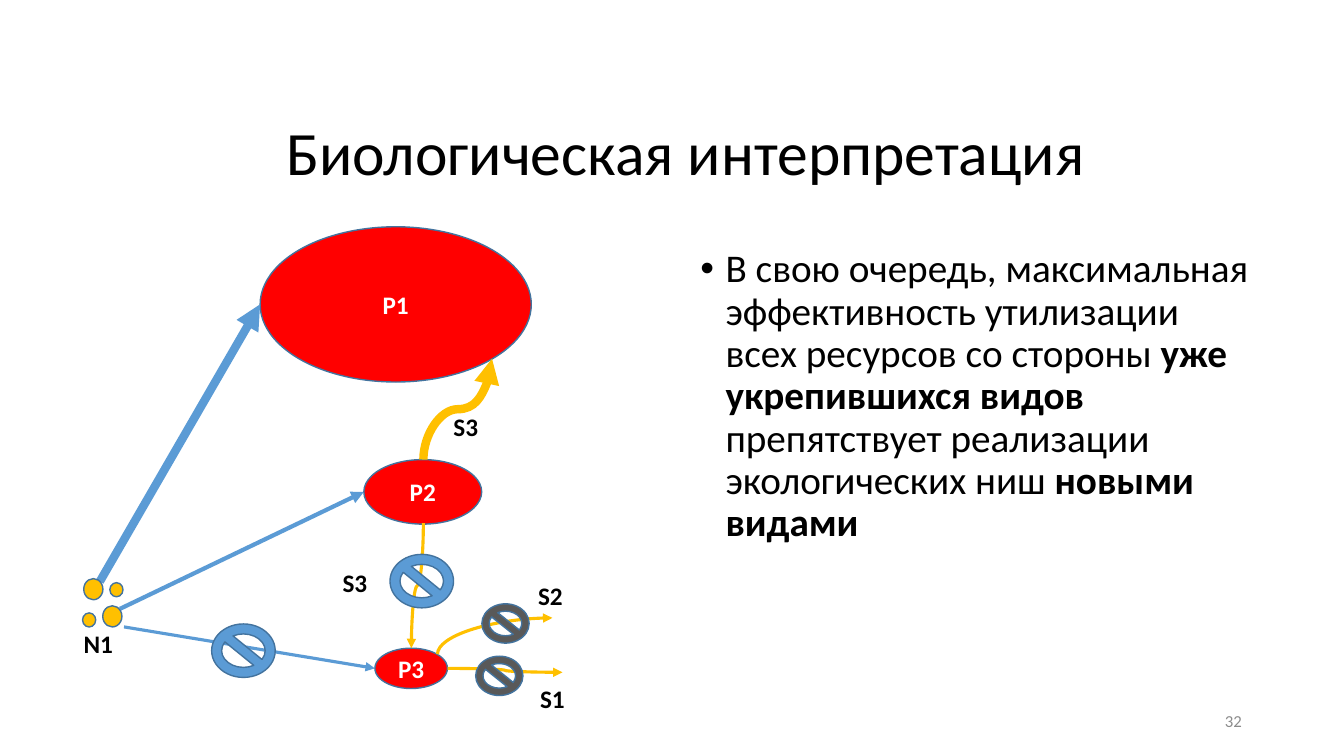
from dataclasses import dataclass

from lxml import etree
from pptx import Presentation
from pptx.dml.color import RGBColor
from pptx.enum.shapes import MSO_CONNECTOR, MSO_SHAPE
from pptx.enum.text import MSO_ANCHOR, PP_ALIGN
from pptx.oxml.ns import qn
from pptx.util import Pt

OVAL, BAN = MSO_SHAPE.OVAL, MSO_SHAPE.NO_SYMBOL
STRAIGHT, CURVE = MSO_CONNECTOR.STRAIGHT, MSO_CONNECTOR.CURVE
LEFT, CENTER, RIGHT = PP_ALIGN.LEFT, PP_ALIGN.CENTER, PP_ALIGN.RIGHT
TOP, MIDDLE = MSO_ANCHOR.TOP, MSO_ANCHOR.MIDDLE


@dataclass(frozen=True)
class Theme:
    font: str = "Calibri"
    text: str = "000000"
    inverse: str = "FFFFFF"
    muted: str = "8C8C8C"
    species: str = "FF0000"
    resource: str = "FFC000"
    flow: str = "5B9BD5"
    blocked: str = "595959"
    outline: str = "43739E"
    title_size: int = 44
    body_size: int = 28
    label_size: int = 18
    number_size: int = 12


T = Theme()


def rgb(value):
    return RGBColor.from_string(value)


def write(sp, runs, size=T.label_size, color=T.text, bold=False, align=LEFT,
          anchor=TOP, wrap=True, spacing=None, bullet=False):
    """Fill a shape with one paragraph; runs is a string or (text, bold) pairs."""
    tf = sp.text_frame
    tf.word_wrap, tf.vertical_anchor = wrap, anchor
    p = tf.paragraphs[0]
    p.alignment, p.line_spacing = align, spacing
    if bullet:
        pPr = p._p.get_or_add_pPr()
        pPr.set("marL", str(Pt(18)))
        pPr.set("indent", str(Pt(-18)))
        etree.SubElement(pPr, qn("a:buFont")).set("typeface", "Arial")
        etree.SubElement(pPr, qn("a:buChar")).set("char", "•")
    for text, strong in [(runs, bold)] if isinstance(runs, str) else runs:
        r = p.add_run()
        r.text = text
        r.font.name, r.font.size, r.font.bold = T.font, Pt(size), strong
        r.font.color.rgb = rgb(color)


def add_text(s, box, runs, **fmt):
    write(s.shapes.add_textbox(*map(Pt, box)), runs, **fmt)


def add_figure(s, kind, box, fill, label=None):
    sp = s.shapes.add_shape(kind, *map(Pt, box))
    sp.shadow.inherit = False
    sp.fill.solid()
    sp.fill.fore_color.rgb = rgb(fill)
    sp.line.color.rgb = rgb(T.outline)
    sp.line.width = Pt(1)
    if label:
        write(sp, label, color=T.inverse, bold=True, align=CENTER, anchor=MIDDLE)


def add_arrow(s, start, end, color, width, kind=STRAIGHT, vertical=False, preset=None):
    """Draw an arrow; a vertical curve is laid out flat, then turned by 90°."""
    (x1, y1), (x2, y2) = start, end
    if vertical:
        cx, cy = (x1 + x2) / 2, (y1 + y2) / 2
        half_w, half_h = (y2 - y1) / 2, (x1 - x2) / 2
        x1, y1, x2, y2 = cx - half_w, cy - half_h, cx + half_w, cy + half_h
    c = s.shapes.add_connector(kind, Pt(x1), Pt(y1), Pt(x2), Pt(y2))
    spPr = c._element.spPr
    if vertical:
        spPr.find(qn("a:xfrm")).set("rot", str(90 * 60000))
    if preset:
        spPr.find(qn("a:prstGeom")).set("prst", preset)
    c.line.color.rgb = rgb(color)
    c.line.width = Pt(width)
    etree.SubElement(spPr.find(qn("a:ln")), qn("a:tailEnd")).set("type", "triangle")
    etree.SubElement(spPr, qn("a:effectLst"))


def add_diagram(s):
    # Species
    for name, box in (("P3", (267.8, 463, 51.8, 28.8)),
                      ("P1", (185.8, 162, 193.7, 110.9)),
                      ("P2", (259.9, 328.3, 84.2, 46.1))):
        add_figure(s, OVAL, box, T.species, name)

    # Nutrient flows from N1
    for start, end, width in (((71.3, 415.4), (185.8, 217.4), 6),
                              ((85.7, 434.9), (259.9, 351.4), 3),
                              ((88.6, 447.8), (267.8, 477.4), 2.25)):
        add_arrow(s, start, end, T.flow, width)

    # Secreted resources
    for start, end, width, vertical, preset in (
            ((302.4, 328.3), (351.4, 256.3), 6, True, None),
            ((302.4, 373.7), (293.8, 463), 2.25, True, None),
            ((312.5, 467.3), (394.6, 441.4), 2.25, True, "curvedConnector2"),
            ((319.7, 477.4), (401.8, 480.2), 2.25, False, None)):
        add_arrow(s, start, end, T.resource, width, CURVE, vertical, preset)

    # Resource labels
    for name, x, y in (("S1", 378.7, 484.6), ("S2", 377.3, 411.1),
                       ("S3", 237.6, 401.8), ("S3", 316.8, 290.2),
                       ("N1", 52.6, 445)):
        add_text(s, (x, y, 36, 28.8), name, bold=True, wrap=False)

    # Blocked paths
    for x, y, w, h, fill in ((151.2, 445.7, 45.4, 38.2, T.flow),
                             (278.6, 396, 45.4, 38.2, T.flow),
                             (344.2, 431.3, 33.8, 28.1, T.blocked),
                             (339.8, 468.7, 33.8, 28.1, T.blocked)):
        add_figure(s, BAN, (x, y, w, h), fill)

    # Nutrient grains
    for box in ((59.8, 413.3, 13.7, 15.1), (73.4, 432.7, 13.7, 15.1),
                (78.5, 416.2, 9.4, 10.1), (59, 437.8, 9.4, 10.1)):
        add_figure(s, OVAL, box, T.resource)


def main():
    prs = Presentation()
    prs.slide_width, prs.slide_height = Pt(960), Pt(540)
    s = prs.slides.add_slide(prs.slide_layouts[6])

    add_diagram(s)

    # Title, statement and slide number
    add_text(s, (197.3, 60.5, 708.5, 101.5), "Биологическая интерпретация",
             size=T.title_size, anchor=MIDDLE, spacing=0.9)
    add_text(s, (493.2, 174.2, 412.6, 315.4),
             [("В свою очередь, максимальная эффективность утилизации "
               "всех ресурсов со стороны ", False),
              ("уже укрепившихся видов", True),
              (" препятствует реализации экологических ниш ", False),
              ("новыми видами", True)],
             size=T.body_size, spacing=0.9, bullet=True)
    add_text(s, (678.2, 500.4, 216, 28.8), "32", size=T.number_size,
             color=T.muted, align=RIGHT, anchor=MIDDLE)

    prs.save("out.pptx")


if __name__ == "__main__":
    main()
